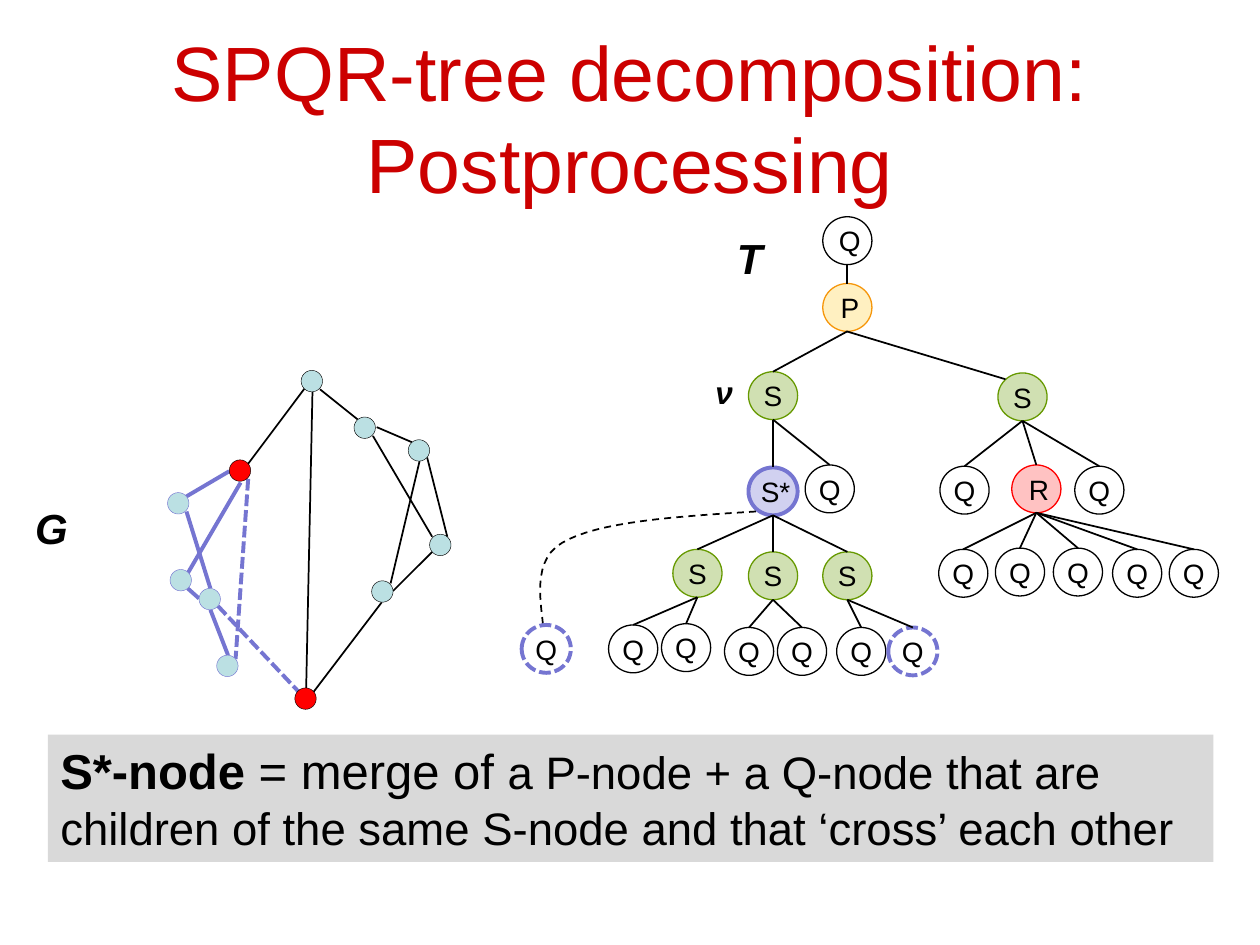
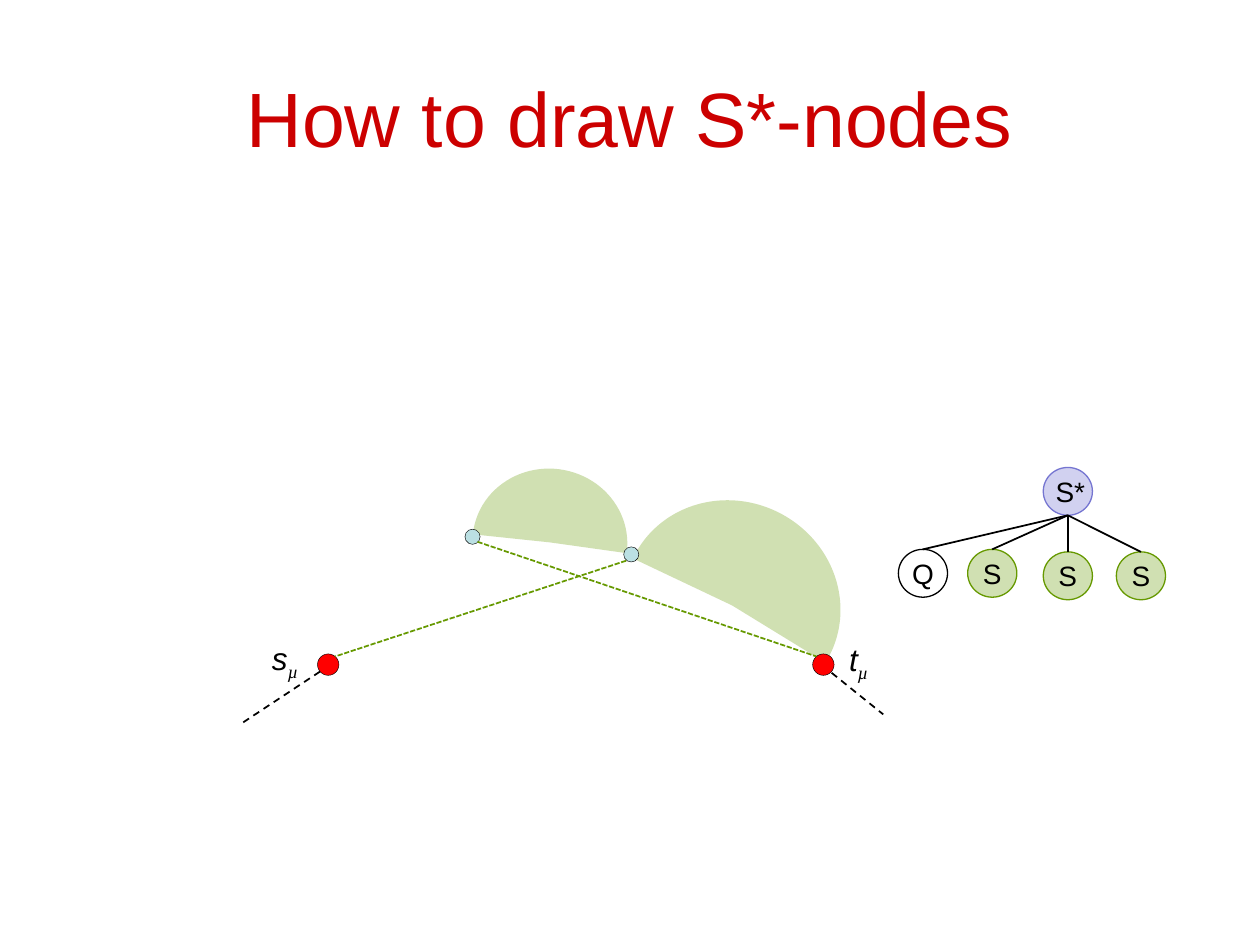
import dataclasses

import lxml.etree
import pptx
import pptx.dml.color
import pptx.enum.dml
import pptx.enum.shapes
import pptx.enum.text
import pptx.oxml.ns
import pptx.util

Inches = pptx.util.Inches
Shape = pptx.enum.shapes.MSO_SHAPE
Anchor = pptx.enum.text.MSO_ANCHOR
Align = pptx.enum.text.PP_ALIGN
DASH = pptx.enum.dml.MSO_LINE.DASH
SHORT_DASH = pptx.enum.dml.MSO_LINE.SQUARE_DOT

BLACK, WHITE, RED = "000000", "FFFFFF", "FF0000"
TITLE_RED, GREEN, LILAC = "CC0000", "669900", "7575D1"
AQUA, GREY = "BBE0E3", "D9D9D9"


def color(hex_string):
    return pptx.dml.color.RGBColor.from_string(hex_string)


@dataclasses.dataclass(frozen=True)
class NodeKind:
    """Look of a tree node; indent pushes its label to the right."""
    label: str
    fill: str = WHITE
    line: str = BLACK
    width: float = 0.75
    dash: object = None
    alpha: int = 100
    indent: float = 0


Q = NodeKind("Q")
Q_ROOT = dataclasses.replace(Q, indent=0.04)
Q_MERGED = dataclasses.replace(Q, line=LILAC, width=2.25, dash=SHORT_DASH)
P = NodeKind("P", "FFF0C1", "F6960A", indent=0.04)
R = NodeKind("R", "FFC2C2", RED, indent=0.04)
S = NodeKind("S", GREEN, GREEN, alpha=30)
S_STAR = NodeKind("S*", "D1D1F0", LILAC, indent=0.04)
S_STAR_BOLD = dataclasses.replace(S_STAR, width=2.25)


class Deck:
    """Holds the shared style and the slide being drawn."""
    font = "Arial"
    node_size = Inches(0.39), Inches(0.38)

    def __init__(self):
        self.prs = pptx.Presentation()
        self.prs.slide_width, self.prs.slide_height = Inches(10), Inches(7.5)

    def new_slide(self, *title_lines):
        self.shapes = self.prs.slides.add_slide(self.prs.slide_layouts[6]).shapes
        frame = self.shapes.add_textbox(Inches(0.5), Inches(0.3), Inches(9), Inches(1.25)).text_frame
        frame.word_wrap, frame.vertical_anchor = True, Anchor.MIDDLE
        paragraph = frame.paragraphs[0]
        paragraph.alignment = Align.CENTER
        for i, line in enumerate(title_lines):
            if i:
                paragraph.add_line_break()
            self.run(paragraph, line, 44, ink=TITLE_RED)

    def run(self, paragraph, text, size, bold=False, italic=False, ink=BLACK, font=None, baseline=0):
        run = paragraph.add_run()
        run.text = text
        run.font.name, run.font.size = font or self.font, pptx.util.Pt(size)
        run.font.bold, run.font.italic = bold, italic
        run.font.color.rgb = color(ink)
        if baseline:
            run.font._element.set("baseline", str(baseline * 1000))

    def label(self, left, top, width, height, *runs):
        """Unwrapped text; each run is (text, size, options)."""
        frame = self.shapes.add_textbox(Inches(left), Inches(top), Inches(width), Inches(height)).text_frame
        frame.word_wrap = False
        for text, size, options in runs:
            self.run(frame.paragraphs[0], text, size, **options)

    def stroke(self, line, ink, width, dash=None):
        line.color.rgb, line.width = color(ink), pptx.util.Pt(width)
        if dash:
            line.dash_style = dash

    def shape(self, preset, left, top, width, height, fill, alpha=100):
        shape = self.shapes.add_shape(preset, Inches(left), Inches(top), width, height)
        shape.shadow.inherit = False
        shape.fill.solid()
        shape.fill.fore_color.rgb = color(fill)
        if alpha < 100:
            tint = shape._element.spPr.find(".//" + pptx.oxml.ns.qn("a:srgbClr"))
            lxml.etree.SubElement(tint, pptx.oxml.ns.qn("a:alpha"), val=str(alpha * 1000))
        shape.line.fill.background()
        return shape

    def line(self, start, end, ink=BLACK, width=1, dash=None):
        ends = [Inches(v) for v in (*start, *end)]
        return self.connect(ends, ink, width, dash)

    def connect(self, ends, ink=BLACK, width=1, dash=None):
        connector = self.shapes.add_connector(pptx.enum.shapes.MSO_CONNECTOR.STRAIGHT, *ends)
        self.stroke(connector.line, ink, width, dash)
        lxml.etree.SubElement(connector._element.spPr, pptx.oxml.ns.qn("a:effectLst"))
        return connector

    def node(self, kind, left, top):
        node = self.shape(Shape.OVAL, left, top, *self.node_size, kind.fill, kind.alpha)
        self.stroke(node.line, kind.line, kind.width, kind.dash)
        frame = node.text_frame
        frame.word_wrap, frame.vertical_anchor = False, Anchor.MIDDLE
        frame.margin_left = Inches(kind.indent)
        frame.margin_right = frame.margin_top = frame.margin_bottom = 0
        frame.paragraphs[0].alignment = Align.CENTER
        self.run(frame.paragraphs[0], kind.label, 16)
        return node

    def children(self, parent, *places):
        """Draw child nodes, each joined at its top to the parent's bottom."""
        nodes = []
        for kind, left, top in places:
            child = self.node(kind, left, top)
            x, y = parent.left + parent.width // 2, parent.top + parent.height
            edge = self.connect((x, y, child.left + child.width // 2, child.top))
            edge.end_connect(child, 0)
            nodes.append(child)
        return nodes

    def vertex(self, left, top, fill=AQUA, ink=BLACK, size=0.17):
        dot = self.shape(Shape.OVAL, left, top, Inches(size), Inches(size), fill)
        self.stroke(dot.line, ink, 0.25)

    def half_disc(self, left, top, width, height, rotation, end_angle):
        disc = self.shape(Shape.ARC, left, top, Inches(width), Inches(height), GREEN, 30)
        disc.rotation = rotation
        disc.adjustments[0], disc.adjustments[1] = 107.08, end_angle

    def curve(self, start, beziers, steps=16):
        """Dashed open outline through cubic Bezier segments."""
        points = [start]
        for b, c, d in beziers:
            a = points[-1]
            for t in (i / steps for i in range(1, steps + 1)):
                u = 1 - t
                points.append(tuple(u**3 * a[k] + 3 * u * u * t * b[k] + 3 * u * t * t * c[k] + t**3 * d[k]
                                    for k in (0, 1)))
        corners = [(Inches(x), Inches(y)) for x, y in points]
        builder = self.shapes.build_freeform(*corners[0])
        builder.add_line_segments(corners[1:], close=False)
        outline = builder.convert_to_shape()
        outline.shadow.inherit = False
        outline.fill.background()
        self.stroke(outline.line, BLACK, 1, DASH)

    def note(self, *runs):
        box = self.shape(Shape.RECTANGLE, 0.38, 5.83, Inches(9.25), Inches(1.01), GREY)
        frame = box.text_frame
        frame.word_wrap, frame.vertical_anchor = True, Anchor.TOP
        frame.paragraphs[0].alignment = Align.LEFT
        for text, size, bold in runs:
            self.run(frame.paragraphs[0], text, size, bold)


def draw_tree(deck):
    root = deck.node(Q_ROOT, 6.53, 1.72)
    parallel, = deck.children(root, (P, 6.53, 2.25))
    nu, = deck.children(parallel, (S, 5.94, 2.95))
    right = deck.node(S, 7.92, 2.96)
    deck.line((6.72, 2.63), (7.98, 3.01))

    star, _ = deck.children(nu, (S_STAR_BOLD, 5.94, 3.71), (Q, 6.39, 3.69))
    _, rigid, _ = deck.children(right, (Q, 7.46, 3.7), (R, 8.03, 3.69), (Q, 8.53, 3.7))
    series = deck.children(star, (S, 5.34, 4.36), (S, 5.94, 4.38), (S, 6.53, 4.38))
    deck.children(rigid, (Q, 7.45, 4.36), (Q, 7.9, 4.35), (Q, 8.36, 4.35), (Q, 8.83, 4.36), (Q, 9.28, 4.36))
    leaves = [((Q, 4.83, 4.96), (Q, 5.25, 4.95)),
              ((Q, 5.75, 4.98), (Q, 6.17, 4.98)),
              ((Q, 6.64, 4.98), (Q_MERGED, 7.05, 4.98))]
    for parent, pair in zip(series, leaves):
        deck.children(parent, *pair)

    deck.curve((6, 4.06), [((5.37, 4.1), (4.74, 4.14), (4.46, 4.31)),
                           ((4.18, 4.47), (4.33, 4.91), (4.31, 5.03)),
                           ((4.28, 5.15), (4.31, 5.02), (4.31, 5.01))])
    deck.node(Q_MERGED, 4.14, 4.96)


def draw_graph(deck):
    plain_edges = [
        ((2.45, 3.04), (1.88, 3.8)), ((2.49, 5.49), (3.03, 4.78)), ((2.54, 3.09), (2.84, 3.33)),
        ((3.12, 4.69), (3.43, 4.38)), ((2.99, 3.39), (3.27, 3.51)), ((3.33, 3.66), (3.1, 4.63)),
        ((2.96, 3.46), (3.43, 4.26)), ((3.39, 3.63), (3.55, 4.26)), ((2.48, 3.11), (2.43, 5.46))]
    star_edges = [
        ((1.82, 3.74), (1.48, 3.94)), ((1.91, 3.83), (1.49, 4.55)), ((1.58, 4.75), (1.49, 4.67)),
        ((1.48, 4.06), (1.67, 4.67)), ((1.67, 4.84), (1.81, 5.2))]
    merged_edges = [((1.97, 3.8), (1.87, 5.23)), ((1.73, 4.81), (2.37, 5.49))]
    for edges, style in ((plain_edges, (BLACK, 1)), (star_edges, (LILAC, 2.25)),
                         (merged_edges, (LILAC, 2.25, SHORT_DASH))):
        for start, end in edges:
            deck.line(start, end, *style)

    star_vertices = [(1.33, 3.91), (1.35, 4.52), (1.72, 5.2), (1.58, 4.67)]
    plain_vertices = [(2.39, 2.94), (2.95, 4.61), (3.24, 3.49), (2.81, 3.31), (3.41, 4.24)]
    poles = [(2.34, 5.46), (1.82, 3.65)]
    for vertices, style in ((star_vertices, (AQUA, LILAC)), (plain_vertices, (AQUA,)), (poles, (RED,))):
        for left, top in vertices:
            deck.vertex(left, top, *style)


def postprocessing_slide(deck):
    deck.new_slide("SPQR-tree decomposition:", "Postprocessing")
    draw_tree(deck)
    draw_graph(deck)
    symbol = dict(bold=True, italic=True)
    deck.label(0.18, 3.94, 0.46, 0.5, ("G", 24, symbol))
    deck.label(5.75, 1.8, 0.41, 0.5, ("T", 24, symbol))
    deck.label(5.58, 2.91, 0.33, 0.4, ("ν", 18, symbol))
    deck.note(("S*-node", 28, True), (" = merge of ", 28, False),
              ("a P-node + a Q-node that are children of the same S-node and that ‘cross’ each other", 26, False))


def drawing_slide(deck):
    deck.new_slide("How to draw S*-nodes")
    deck.half_disc(3.75, 3.72, 1.23, 1.17, 7.5, 0.31)
    deck.half_disc(4.94, 3.98, 1.74, 1.65, 26.9, 2.78)

    star = deck.node(S_STAR, 8.28, 3.71)
    deck.children(star, (Q, 7.13, 4.36), (S, 7.68, 4.36), (S, 8.28, 4.38), (S, 8.86, 4.38))

    subscript = ("µ", 18, dict(italic=True, font="Times New Roman", baseline=-25))
    deck.label(2.06, 5.02, 0.42, 0.4, ("s", 18, dict(italic=True)), subscript)
    deck.label(6.64, 5.03, 0.37, 0.71, ("t", 18, dict(italic=True)), subscript)
    for pole_left in (2.52, 6.45):
        deck.vertex(pole_left, 5.19, RED)
    deck.line((2.54, 5.33), (1.92, 5.74), dash=DASH)
    deck.line((6.6, 5.34), (7.01, 5.67), dash=DASH)
    for left, top in ((3.69, 4.2), (4.95, 4.34)):
        deck.vertex(left, top, size=0.12)
    deck.line((4.97, 4.45), (2.66, 5.21), GREEN, dash=SHORT_DASH)
    deck.line((3.79, 4.3), (6.48, 5.21), GREEN, dash=SHORT_DASH)


def main():
    deck = Deck()
    postprocessing_slide(deck)
    drawing_slide(deck)
    deck.prs.save("out.pptx")


if __name__ == "__main__":
    main()
